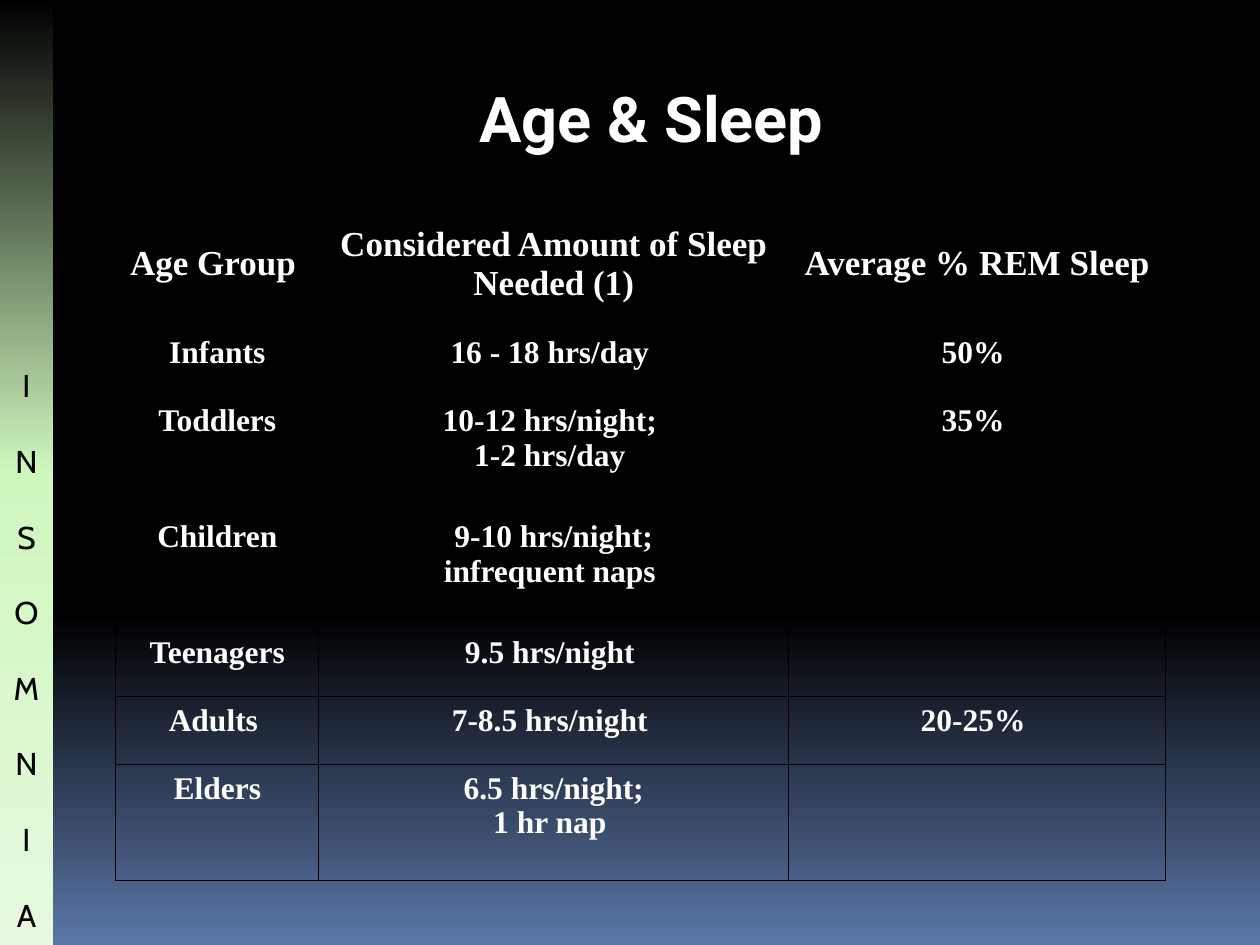
"""Build the Age & Sleep slide with its table and the vertical side band."""
import copy

import pptx
import pptx.dml.color
import pptx.enum.shapes
import pptx.enum.text
import pptx.oxml
import pptx.oxml.ns
import pptx.util
from pptx.util import Inches

TITLE = "Age & Sleep"
BAND_WORD = "INSOMNIA"
ROWS = [
    ("Age Group ", "Considered Amount of Sleep Needed (1)", "Average % REM Sleep"),
    ("Infants", "16 - 18 hrs/day ", "50% "),
    ("Toddlers", "10-12 hrs/night; \n1-2 hrs/day ", "35% "),
    ("Children", "9-10 hrs/night;\ninfrequent naps ", ""),
    ("Teenagers", "9.5 hrs/night ", ""),
    ("Adults ", "7-8.5 hrs/night ", "20-25% "),
    ("Elders", "6.5 hrs/night;\n1 hr nap ", ""),
]
COLUMN_WIDTHS = (1.61, 3.73, 2.99)
HEADER_HEIGHT, SINGLE_HEIGHT, DOUBLE_HEIGHT = 1.03, 0.54, 0.92
BAND_WIDTH = 0.42


class Theme:
    """Colours, fonts and type sizes of the slide."""
    black, white = "000000", "FFFFFF"
    backdrop = [(0, "000000"), (0.65, "000000"), (1, "5B77A8")]
    band = [(0, "000000"), (0.5, "CEF7BD"), (1, "E7FADF")]
    title_font, table_font, band_font = "Roboto", "Times New Roman", "Cabin"
    title_size, header_size, body_size = 36, 20, 18
    border = 0.75


def rgb(value):
    """Return the colour object for a hex value."""
    return pptx.dml.color.RGBColor.from_string(value)


def write(frame, lines, *, font, size, color, bold=False, gap=0):
    """Fill a text frame with centred, formatted paragraphs."""
    frame.word_wrap = True
    for index, line in enumerate(lines):
        para = frame.add_paragraph() if index else frame.paragraphs[0]
        para.text = line
        para.alignment = pptx.enum.text.PP_ALIGN.CENTER
        para.space_before = pptx.util.Pt(gap if index else 0)
        for span in para.runs:
            span.font.name = font
            span.font.size = pptx.util.Pt(size)
            span.font.bold = bold
            span.font.color.rgb = rgb(color)


def shade(fill, holder, stops):
    """Give a fill a top-to-bottom gradient with the given stops."""
    fill.gradient()
    fill.gradient_angle = 270
    stop_list = holder.find(".//" + pptx.oxml.ns.qn("a:gsLst"))
    while len(stop_list) < len(stops):
        stop_list.append(copy.deepcopy(stop_list[0]))
    for stop, (position, color) in zip(fill.gradient_stops, stops):
        stop.position = position
        stop.color.rgb = rgb(color)


def outline(cell):
    """Draw a thin border on all four sides of a cell."""
    properties = cell._tc.get_or_add_tcPr()
    width = pptx.util.Pt(Theme.border)
    for index, side in enumerate(("lnL", "lnR", "lnT", "lnB")):
        properties.insert(index, pptx.oxml.parse_xml(
            f'<a:{side} {pptx.oxml.ns.nsdecls("a")} w="{int(width)}"><a:solidFill>'
            f'<a:srgbClr val="{Theme.black}"/></a:solidFill></a:{side}>'))


def add_sleep_table(page):
    """Add the table of sleep needs by age group."""
    heights = [HEADER_HEIGHT] + [
        DOUBLE_HEIGHT if any("\n" in text for text in row) else SINGLE_HEIGHT
        for row in ROWS[1:]]
    table = page.shapes.add_table(
        len(ROWS), len(COLUMN_WIDTHS), Inches(0.92), Inches(1.58),
        Inches(sum(COLUMN_WIDTHS)), Inches(sum(heights))).table
    table.first_row = table.horz_banding = False
    for column, width in zip(table.columns, COLUMN_WIDTHS):
        column.width = Inches(width)
    for index, (row, height) in enumerate(zip(ROWS, heights)):
        table.rows[index].height = Inches(height)
        for cell, text in zip(table.rows[index].cells, row):
            write(cell.text_frame, [text], font=Theme.table_font, color=Theme.white,
                  size=Theme.body_size if index else Theme.header_size, bold=True)
            if index:
                cell.fill.background()
            else:
                cell.fill.solid()
                cell.fill.fore_color.rgb = rgb(Theme.black)
                cell.vertical_anchor = pptx.enum.text.MSO_ANCHOR.MIDDLE
            outline(cell)


def add_side_band(page):
    """Add the gradient band and its stacked letters."""
    band = page.shapes.add_shape(
        pptx.enum.shapes.MSO_SHAPE.RECTANGLE, 0, 0, Inches(BAND_WIDTH), Inches(7.5))
    band.shadow.inherit = False
    band.line.fill.background()
    shade(band.fill, band._element, Theme.band)
    box = page.shapes.add_textbox(0, Inches(2.86), Inches(BAND_WIDTH), Inches(4.64))
    box.text_frame.margin_left = box.text_frame.margin_right = 0
    write(box.text_frame, BAND_WORD, font=Theme.band_font, size=Theme.body_size,
          color=Theme.black, gap=21.6)


def main():
    """Assemble and save the deck."""
    deck = pptx.Presentation()
    deck.slide_width, deck.slide_height = Inches(10), Inches(7.5)
    page = deck.slides.add_slide(deck.slide_layouts[6])
    shade(page.background.fill, page._element, Theme.backdrop)
    box = page.shapes.add_textbox(Inches(1.92), Inches(0.58), Inches(6.5), Inches(0.71))
    write(box.text_frame, [TITLE], font=Theme.title_font, size=Theme.title_size,
          color=Theme.white, bold=True)
    add_sleep_table(page)
    add_side_band(page)
    deck.save("out.pptx")


if __name__ == "__main__":
    main()
